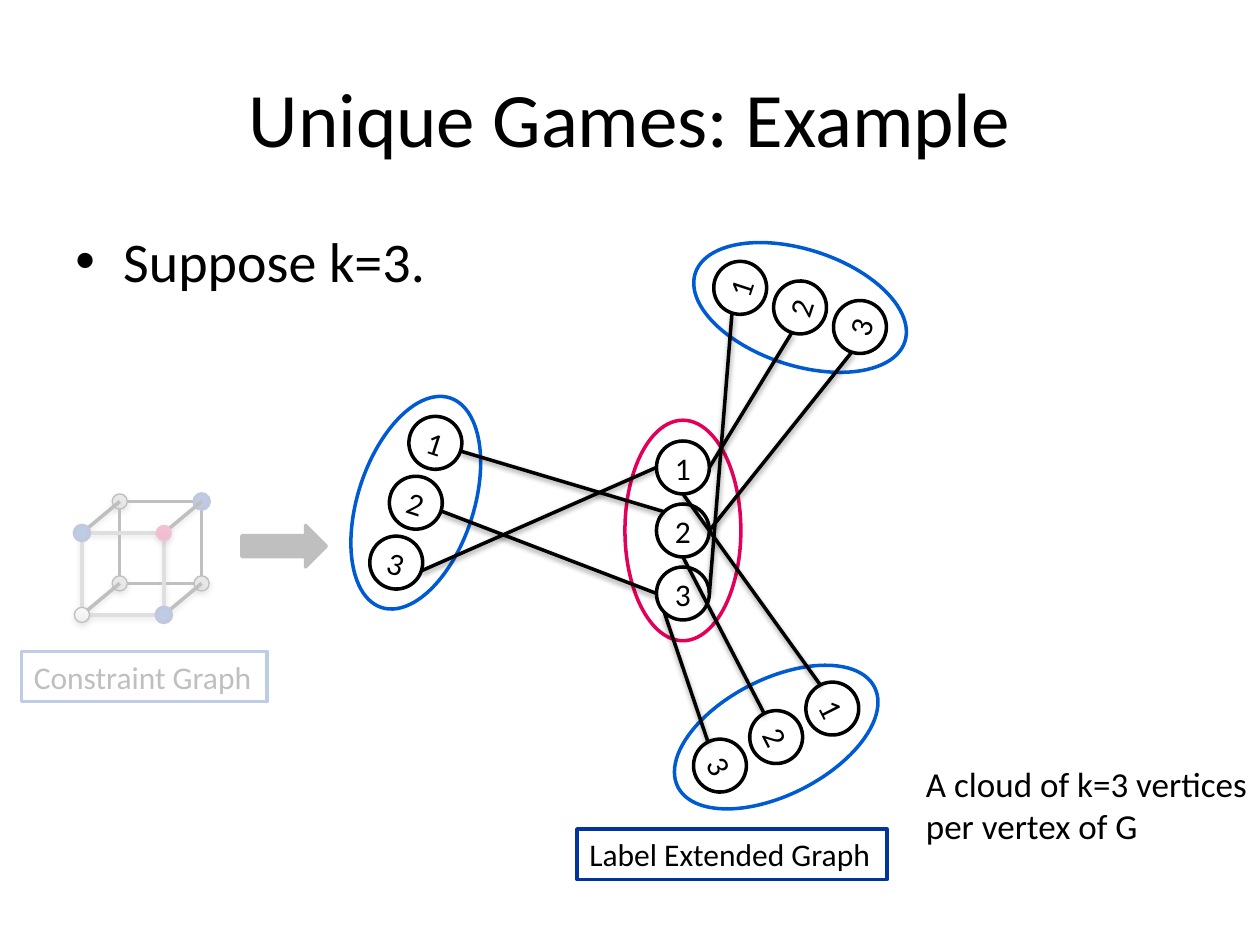
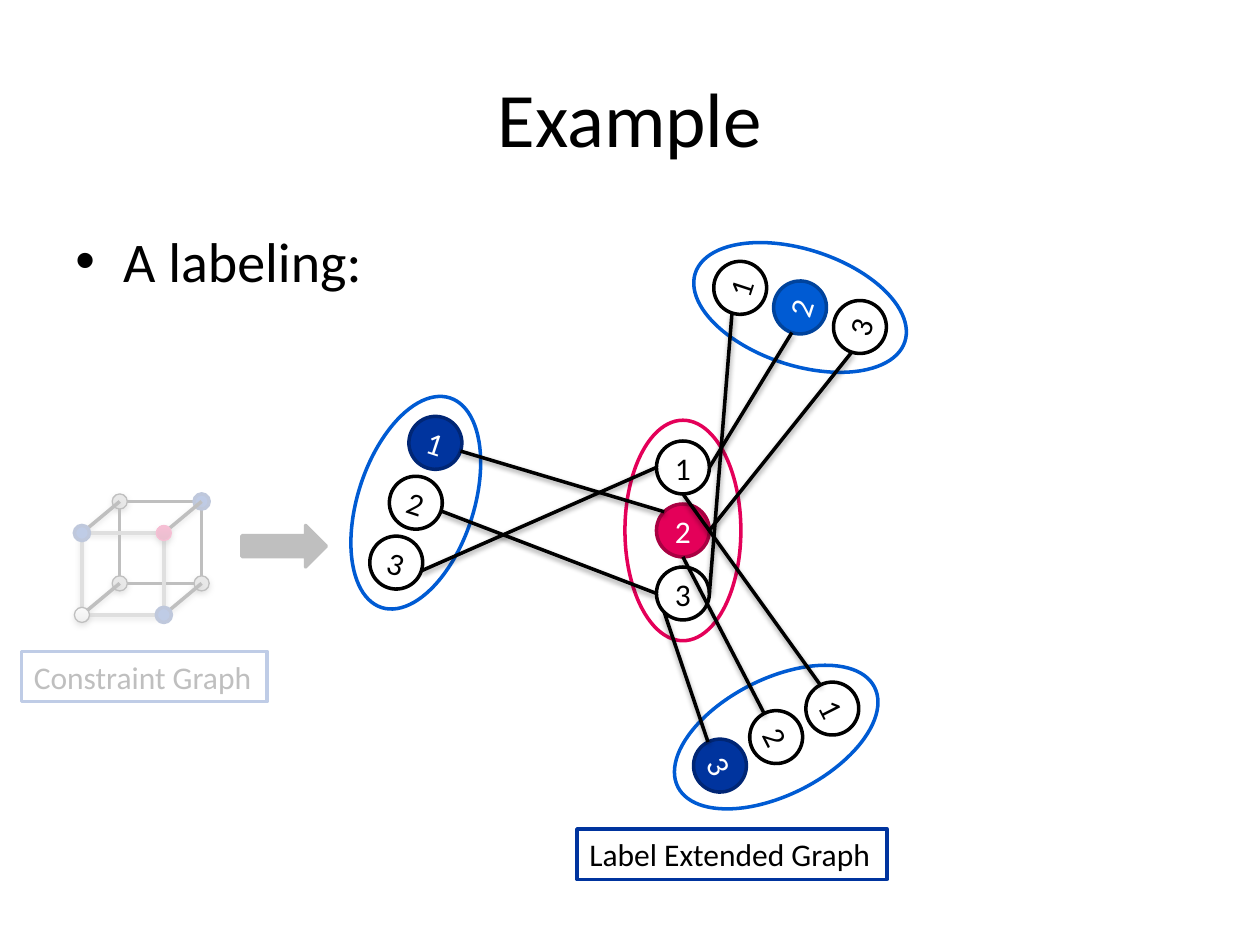
"""Build two slides on a label extended graph."""
import math

from lxml import etree
from pptx import Presentation
from pptx import util as u
from pptx.dml import color as dml
from pptx.enum import shapes as kinds, text as txt
from pptx.oxml import ns

FONT = "Calibri"
BLACK, WHITE, GREY, MID = "000000", "FFFFFF", "A6A6A6", "808080"
NAVY, BLUE, PINK = "00349E", "005BD3", "E40059"
RIMS = {WHITE: BLACK, NAVY: "002675", BLUE: "00439C", PINK: "A90042"}
OVAL, RECT, ARROW = (kinds.MSO_SHAPE.OVAL, kinds.MSO_SHAPE.RECTANGLE,
                     kinds.MSO_SHAPE.RIGHT_ARROW)
MIDDLE, CENTER = txt.MSO_ANCHOR.MIDDLE, txt.PP_ALIGN.CENTER

NODE, GAP, CLOUD = 0.42, 0.5, (0.92, 1.75)
RIGHT, DOWN, LOW_LEFT, LEFT, TOP_LEFT = 0, 90, 135, 180, 225
CLOUDS = {
    "hub": (0, 0, 0, PINK),
    "top": (0.93, -1.77, 288.1, BLUE),
    "low": (0.74, 1.64, 63.1, BLUE),
    "left": (-2.12, -0.22, 18.1, BLUE),
}
EDGES = [
    ("left", 1, RIGHT, 2, TOP_LEFT), ("left", 2, RIGHT, 3, LEFT), ("left", 3, RIGHT, 1, LEFT),
    ("top", 2, LEFT, 1, RIGHT), ("top", 3, LEFT, 2, RIGHT), ("top", 1, LEFT, 3, RIGHT),
    ("low", 1, LEFT, 1, DOWN), ("low", 2, LEFT, 2, DOWN), ("low", 3, LEFT, 3, LOW_LEFT),
]


def rgb(code):
    """Turn a hex string into a colour."""
    return dml.RGBColor.from_string(code)


def add(parent, tag, **attrs):
    """Append an a: element with the given attributes."""
    node = etree.SubElement(parent, ns.qn("a:" + tag))
    for key, val in attrs.items():
        node.set(key, str(val))
    return node


def shade(item):
    """Give a shape or connector a soft shadow below it."""
    props = item._element.spPr
    for old in props.findall(ns.qn("a:effectLst")):
        props.remove(old)
    cast = add(add(props, "effectLst"), "outerShdw", blurRad=40000, dist=20000,
               dir=5400000, rotWithShape=0)
    add(add(cast, "srgbClr", val=BLACK), "alpha", val=38000)


def draw(slide, kind, box, fill=None, line=None, width=2, turn=0):
    """Draw a preset shape; a pair of fills makes a gradient."""
    shape = slide.shapes.add_shape(kind, *map(u.Inches, box))
    shape.shadow.inherit = False
    shape.rotation = turn
    if isinstance(fill, tuple):
        shape.fill.gradient()
        shape.fill.gradient_angle = 90
        for stop, code in zip(shape.fill.gradient_stops, fill):
            stop.color.rgb = rgb(code)
    elif fill:
        shape.fill.solid()
        shape.fill.fore_color.rgb = rgb(fill)
    else:
        shape.fill.background()
    if line:
        shape.line.color.rgb = rgb(line)
        shape.line.width = u.Pt(width)
    else:
        shape.line.fill.background()
    return shape


def join(slide, start, end):
    """Draw a black shaded line between two points."""
    line = slide.shapes.add_connector(kinds.MSO_CONNECTOR.STRAIGHT,
                                      *map(u.Inches, (*start, *end)))
    line.line.color.rgb = rgb(BLACK)
    line.line.width = u.Pt(2)
    shade(line)


def write(shape, words, size=18, code=BLACK, align=txt.PP_ALIGN.LEFT,
          anchor=txt.MSO_ANCHOR.TOP, wrap=False, inset=None, bullet=False):
    """Fill a shape with formatted text, one paragraph a line."""
    frame = shape.text_frame
    frame.text = words
    frame.word_wrap = wrap
    frame.vertical_anchor = anchor
    if inset is not None:
        frame.margin_left = frame.margin_right = u.Inches(inset)
        frame.margin_top = frame.margin_bottom = u.Inches(inset)
    for para in frame.paragraphs:
        para.alignment = align
        for run in para.runs:
            run.font.name, run.font.size = FONT, u.Pt(size)
            run.font.color.rgb = rgb(code)
        if bullet:
            props = para._p.get_or_add_pPr()
            props.set("marL", str(u.Inches(0.38)))
            props.set("indent", str(u.Inches(-0.38)))
            add(props, "buFont", typeface="Arial")
            add(props, "buChar", char="•")


def note(slide, box, words, **style):
    """Add a text box."""
    write(slide.shapes.add_textbox(*map(u.Inches, box)), words, **style)


def label(slide, box, words):
    """Add a caption framed in navy."""
    write(draw(slide, RECT, box, WHITE, NAVY), words)


def dot(slide, x, y, fill, line, width, cast):
    """Draw a small corner dot around a point."""
    shape = draw(slide, OVAL, (x - 0.06, y - 0.06, 0.12, 0.12), fill, line, width)
    if cast:
        shade(shape)


def cube(slide, x, y, side=0.65, dx=0.3, dy=0.25):
    """Draw the cube of the constraint graph from its top left corner."""
    plain, navy = (GREY, BLACK, 0.75, True), (NAVY, RIMS[NAVY], 2, False)
    pink = (("AA0042", "DE0057"), "DF0057", 0.75, True)
    pale = (("BDBDBD", "EEEEEE"), BLACK, 0.75, True)
    spots = [(0, 0), (side, 0), (side, side), (0, side)]
    draw(slide, RECT, (x + dx, y, side, side), line=BLACK)
    for (sx, sy), look in zip(spots, (plain, navy, plain, plain)):
        dot(slide, x + dx + sx, y + sy, *look)
    for sx, sy in spots:
        join(slide, (x + sx, y + dy + sy), (x + dx + sx, y + sy))
    shade(draw(slide, RECT, (x, y + dy, side, side), line=MID))
    for (sx, sy), look in zip(spots, (navy, pink, navy, pale)):
        dot(slide, x + sx, y + dy + sy, *look)


def polar(point, reach, angle):
    """Move a point by a reach at a clockwise angle."""
    turn = math.radians(angle)
    return point[0] + reach * math.cos(turn), point[1] + reach * math.sin(turn)


def graph(slide, x, y, picks):
    """Draw the clouds and their edges around the hub's centre."""
    spots = {}
    for name, (dx, dy, turn, line) in CLOUDS.items():
        mid = (x + dx, y + dy)
        wide, high = CLOUD
        draw(slide, OVAL, (mid[0] - wide / 2, mid[1] - high / 2, wide, high),
             WHITE, line, turn=turn)
        for num in (1, 2, 3):
            cx, cy = spots[name, num] = polar(mid, (num - 2) * GAP, turn + DOWN)
            fill = picks.get((name, num), WHITE)
            node = draw(slide, OVAL, (cx - NODE / 2, cy - NODE / 2, NODE, NODE),
                        fill, RIMS[fill], turn=turn)
            write(node, str(num), code=BLACK if fill == WHITE else WHITE,
                  align=CENTER, anchor=MIDDLE, inset=0)
    for name, num, side, goal, port in EDGES:
        join(slide, polar(spots[name, num], NODE / 2, CLOUDS[name][2] + side),
             polar(spots["hub", goal], NODE / 2, port))


def veil(slide, box):
    """Fade a region with a see-through white sheet."""
    sheet = draw(slide, RECT, box, WHITE)
    tint = sheet._element.spPr.find(ns.qn("a:solidFill"))[0]
    add(tint, "alpha", val=75000)


def page(deck, title, point, picks, arrow=False, remark=None):
    """Build one slide with both graphs."""
    slide = deck.slides.add_slide(deck.slide_layouts[5])
    head = slide.shapes.title
    head.left, head.top, head.width, head.height = map(u.Inches, (0.5, 0.3, 9, 1.25))
    write(head, title, size=44, align=CENTER, anchor=MIDDLE, wrap=True)
    note(slide, (0.5, 1.75, 9, 4.95), point, size=32, wrap=True, bullet=True)
    cube(slide, 0.65, 3.98)
    graph(slide, 5.42, 4.21, picks)
    label(slide, (4.58, 6.58, 2.46, 0.4), "Label Extended Graph")
    label(slide, (0.17, 5.17, 1.95, 0.4), "Constraint Graph")
    if arrow:
        draw(slide, ARROW, (1.92, 4.17, 0.67, 0.33), BLACK, BLACK)
    veil(slide, (0.08, 2.83, 2.67, 3.5))
    if remark:
        note(slide, (7.25, 6, 2.78, 0.77), remark, size=20)


def main():
    """Build and save the deck."""
    deck = Presentation()
    deck.slide_width, deck.slide_height = u.Inches(10), u.Inches(7.5)
    page(deck, "Unique Games: Example", "Suppose k=3.", {}, arrow=True,
         remark="A cloud of k=3 vertices\nper vertex of G")
    page(deck, "Example", "A labeling:",
         {("hub", 2): PINK, ("top", 2): BLUE, ("low", 3): NAVY, ("left", 1): NAVY},
         arrow=True)
    deck.save("out.pptx")


if __name__ == "__main__":
    main()
